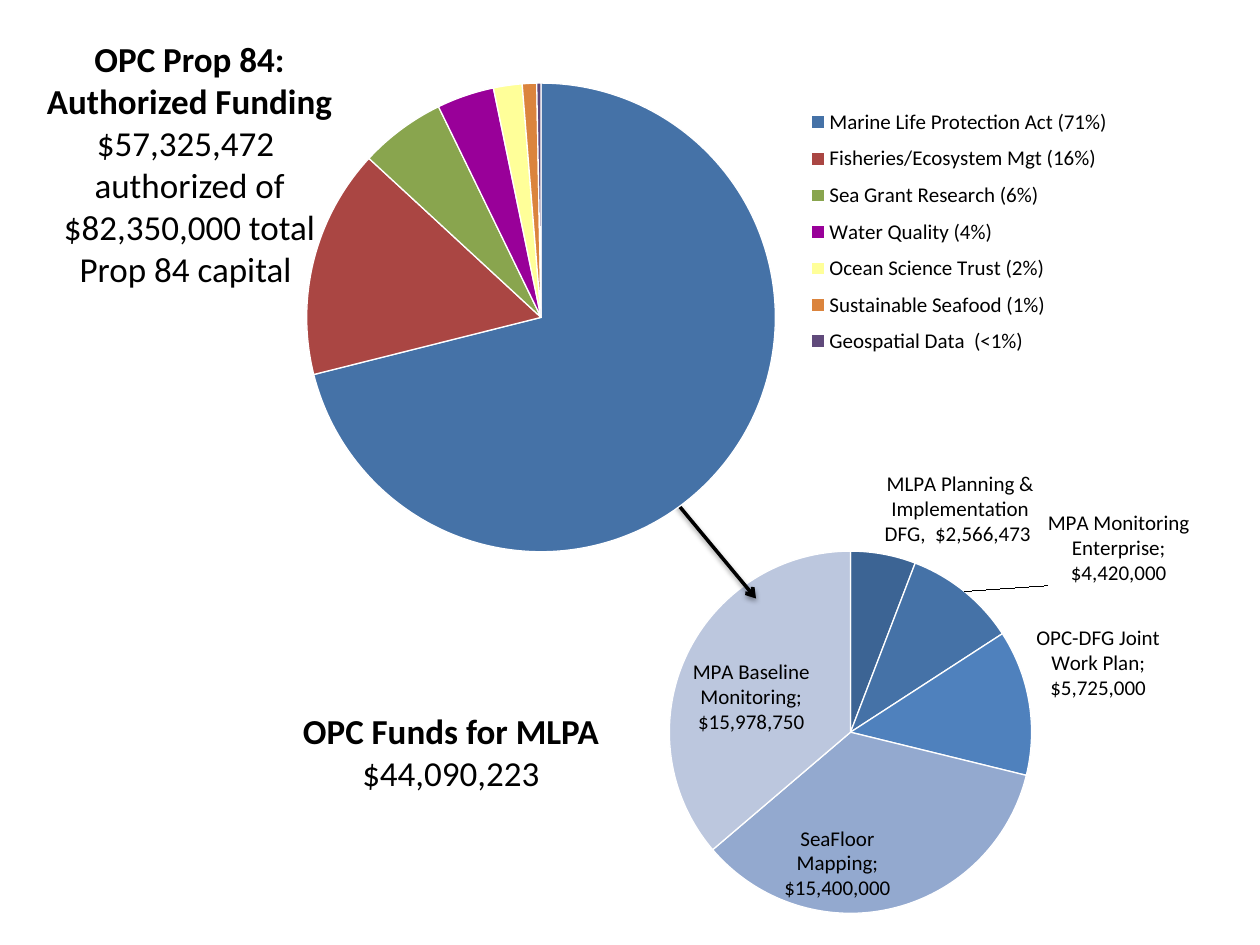
"""Build a slide with two linked pie charts of ocean funding."""
from dataclasses import dataclass

from lxml import etree
from pptx import Presentation
from pptx.chart.data import CategoryChartData
from pptx.dml.color import RGBColor
from pptx.enum import chart as ch, shapes, text
from pptx.oxml.ns import qn
from pptx.util import Inches, Pt


@dataclass(frozen=True)
class Theme:
    font: str = "Calibri"
    ink: str = "000000"
    white: str = "FFFFFF"
    heading: int = 20
    label: int = 12
    programs: tuple = ("4572A7", "AA4643", "89A54E", "990099", "FFFF99",
                       "DB843D", "604A7B")
    mlpa: tuple = ("3C6494", "4572A7", "4F81BD", "93A9CF", "BCC7DE")


THEME = Theme()
OUT, IN = ch.XL_LABEL_POSITION.OUTSIDE_END, ch.XL_LABEL_POSITION.INSIDE_END
MONEY = '"$"#,##0'
PROGRAMS = [
    ("Marine Life Protection Act (71%)", 72),
    ("Fisheries/Ecosystem Mgt (16%)", 16),
    ("Sea Grant Research (6%)", 6),
    ("Water Quality (4%)", 4),
    ("Ocean Science Trust (2%)", 2),
    ("Sustainable Seafood (1%)", 1),
    ("Geospatial Data  (<1%)", 0.3),
]
MLPA = [
    ("MLPA Planning & Implementation DFG", 2566473),
    ("MPA Monitoring Enterprise", 4420000),
    ("OPC-DFG Joint Work Plan", 5725000),
    ("SeaFloor Mapping", 15400000),
    ("MPA Baseline Monitoring", 15978750),
]
LABEL_SPOTS = [(OUT, None), (OUT, (0.1, 0)), (OUT, None), (IN, None), (IN, None)]


def rgb(value):
    return RGBColor.from_string(value)


def style_font(font, size):
    font.name, font.size = THEME.font, Pt(size)
    font.color.rgb = rgb(THEME.ink)


def add_layout(parent, index, **values):
    for old in parent.findall(qn("c:layout")):
        parent.remove(old)
    layout = etree.Element(qn("c:layout"))
    manual = etree.SubElement(layout, qn("c:manualLayout"))
    for tag, value in values.items():
        etree.SubElement(manual, qn(f"c:{tag}")).set("val", str(value))
    parent.insert(index, layout)


def frame(x, y, w, h):
    return dict(xMode="edge", yMode="edge", x=x, y=y, w=w, h=h)


def add_pie(s, box, rows, colors, plot):
    data = CategoryChartData()
    data.categories = [name for name, _ in rows]
    data.add_series("Series 1", [value for _, value in rows])
    chart = s.shapes.add_chart(ch.XL_CHART_TYPE.PIE, *map(Inches, box), data).chart
    chart.has_title = chart.has_legend = False
    style_font(chart.font, THEME.label)
    chart.plots[0].vary_by_categories = True
    for i, color in enumerate(colors):
        fmt = chart.plots[0].series[0].points[i].format
        fmt.fill.solid()
        fmt.fill.fore_color.rgb = rgb(color)
        fmt.line.color.rgb = rgb(THEME.white)
        fmt.line.width = Pt(0.75)
    area = chart.element.find(".//" + qn("c:plotArea"))
    add_layout(area, 0, layoutTarget="inner", **frame(*plot))
    return chart


def add_legend(chart, box):
    chart.has_legend = True
    legend = chart.legend
    legend.position = ch.XL_LEGEND_POSITION.RIGHT
    legend.include_in_layout = False
    style_font(legend.font, THEME.label)
    add_layout(chart.element.find(".//" + qn("c:legend")), 1, **frame(*box))


def add_labels(chart, spots):
    plot = chart.plots[0]
    plot.has_data_labels = True
    labels = plot.data_labels
    labels.show_value = labels.show_category_name = True
    labels.number_format, labels.number_format_is_linked = MONEY, False
    style_font(labels.font, THEME.label)
    for i, (position, _) in enumerate(spots):
        label = plot.series[0].points[i].data_label
        style_font(label.font, THEME.label)
        label.position = position
    for node, (_, offset) in zip(chart.element.iter(qn("c:dLbl")), spots):
        node.find(qn("c:showCatName")).set("val", "1")
        etree.SubElement(node, qn("c:separator")).text = "; "
        number = etree.Element(qn("c:numFmt"), formatCode=MONEY, sourceLinked="0")
        node.find(qn("c:txPr")).addprevious(number)
        if offset:
            add_layout(node, 1, x=offset[0], y=offset[1])
    first = plot.series[0].points[0].data_label.text_frame
    first.text = "MLPA Planning & Implementation DFG,  $2,566,473 "
    style_font(first.paragraphs[0].runs[0].font, THEME.label)


def add_caption(s, box, lines, bold_count):
    tf = s.shapes.add_textbox(*map(Inches, box)).text_frame
    tf.word_wrap = True
    tf.text = "\n".join(lines)
    for i, p in enumerate(tf.paragraphs):
        p.alignment = text.PP_ALIGN.CENTER
        style_font(p.font, THEME.heading)
        p.font.bold = i < bold_count


def add_arrow(s, start, end):
    line = s.shapes.add_connector(shapes.MSO_CONNECTOR.STRAIGHT,
                                  *map(Inches, start + end))
    line.line.color.rgb = rgb(THEME.ink)
    line.line.width = Pt(2)
    props = line.element.spPr
    etree.SubElement(props.find(qn("a:ln")), qn("a:tailEnd"), type="arrow")
    effects = etree.SubElement(props, qn("a:effectLst"))
    shadow = etree.SubElement(effects, qn("a:outerShdw"), blurRad=str(Pt(3.1)),
                              dist=str(Pt(1.6)), dir="5400000", rotWithShape="0")
    color = etree.SubElement(shadow, qn("a:srgbClr"), val=THEME.ink)
    etree.SubElement(color, qn("a:alpha"), val="38000")


def main():
    prs = Presentation()
    prs.slide_width, prs.slide_height = Inches(10), Inches(7.5)
    s = prs.slides.add_slide(prs.slide_layouts[6])
    mlpa = add_pie(s, (3.75, 2.92, 6.25, 4.78), MLPA, THEME.mlpa,
                   (0.25, 0.22, 0.46, 0.77))
    add_labels(mlpa, LABEL_SPOTS)
    add_caption(s, (0.26, 0.25, 2.49, 2.12),
                ["OPC Prop 84:", "Authorized Funding ", "$57,325,472 ",
                 "authorized of $82,350,000 total Prop 84 capital "], 2)
    add_caption(s, (2.08, 5.58, 3, 1.11), ["OPC Funds for MLPA", "$44,090,223"], 1)
    add_arrow(s, (5.17, 3.75), (6, 4.75))
    programs = add_pie(s, (2.08, 0.5, 6.92, 4), PROGRAMS, THEME.programs,
                       (0.05, 0.04, 0.54, 0.93))
    add_legend(programs, (0.62, 0.07, 0.36, 0.53))
    prs.save("out.pptx")


if __name__ == "__main__":
    main()
